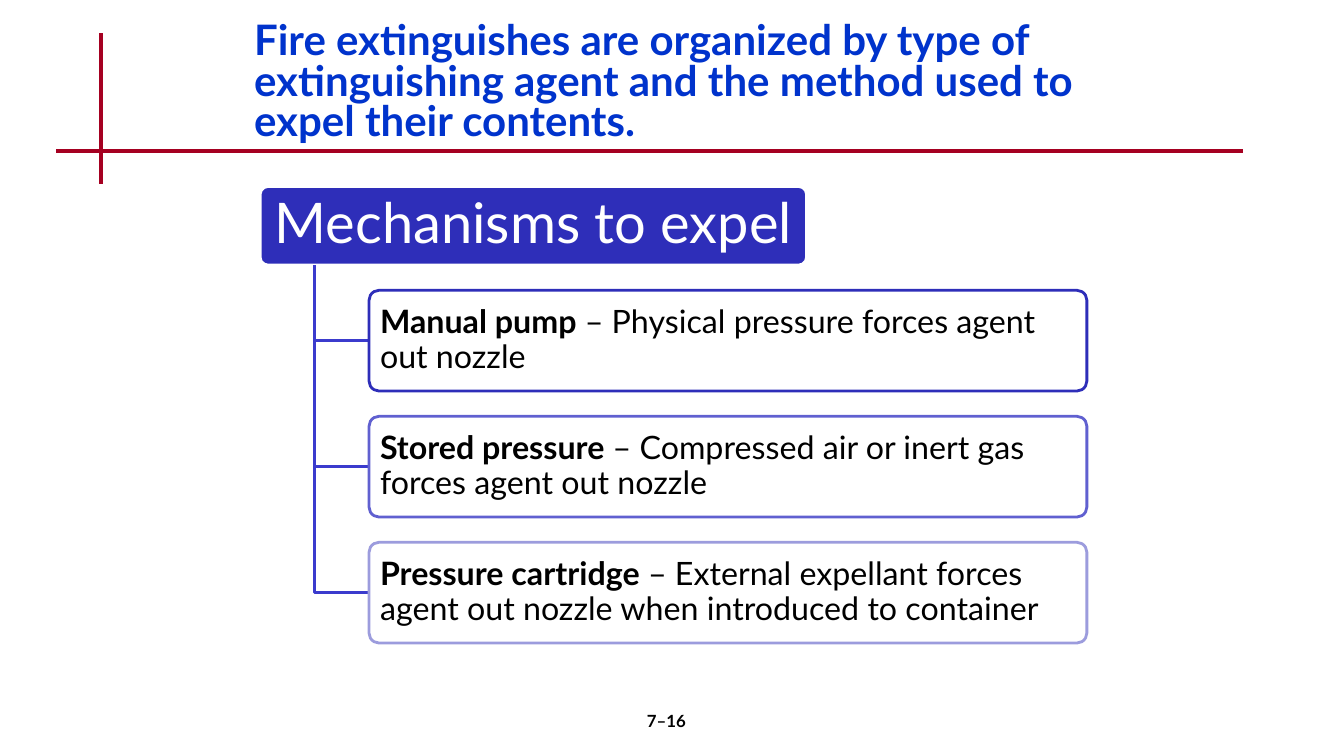
import pptx
import pptx.dml.color
import pptx.enum.shapes
import pptx.enum.text
import pptx.oxml.ns
import pptx.util
from lxml import etree

Inches = pptx.util.Inches
Pt = pptx.util.Pt
ALIGN = pptx.enum.text.PP_ALIGN
ANCHOR = pptx.enum.text.MSO_ANCHOR

COLORS = {
    "title": "0033CC",
    "rule": "A50021",
    "header": "2E2EB9",
    "branch": "3B3BCD",
    "white": "FFFFFF",
    "text": "000000",
}

TITLE = ("Fire extinguishes are organized by type of extinguishing agent "
         "and the method used to expel their contents.")

# Name, description, outline colour
MECHANISMS = [
    ("Manual pump ", "– Physical pressure forces agent out nozzle", "2E2EB9"),
    ("Stored pressure ", "– Compressed air or inert gas forces agent out nozzle", "6060D0"),
    ("Pressure cartridge ", "– External expellant forces agent out nozzle "
     "when introduced to container", "9C9CDD"),
]


def rgb(value):
    return pptx.dml.color.RGBColor.from_string(value)


class SlideBuilder:
    font = "Lato"
    line_width = Pt(2)

    def __init__(self, page):
        self.page = page

    def style_line(self, shape, color, width=line_width):
        shape.line.color.rgb = rgb(color)
        shape.line.width = width

    def add_text(self, shape, spans, size, color, align=ALIGN.LEFT,
                 anchor=ANCHOR.TOP, spacing=None, inset=(0.1, 0.05)):
        """Fill a shape with one paragraph of (text, bold) spans."""
        frame = shape.text_frame
        frame.word_wrap = True
        frame.auto_size = pptx.enum.text.MSO_AUTO_SIZE.NONE
        frame.vertical_anchor = anchor
        frame.margin_left = frame.margin_right = Inches(inset[0])
        frame.margin_top = frame.margin_bottom = Inches(inset[1])
        para = frame.paragraphs[0]
        para.alignment = align
        para.line_spacing = spacing
        for text, bold in spans:
            span = para.add_run()
            span.text = text
            span.font.name = self.font
            span.font.size = Pt(size)
            span.font.bold = bold
            span.font.color.rgb = rgb(color)

    def title(self, text, left, top, width, height):
        box = self.page.shapes.title
        box.left, box.top = Inches(left), Inches(top)
        box.width, box.height = Inches(width), Inches(height)
        self.add_text(box, [(text, True)], 30, COLORS["title"],
                      anchor=ANCHOR.MIDDLE, spacing=0.8)

    def rule(self, x1, y1, x2, y2):
        line = self.page.shapes.add_connector(
            pptx.enum.shapes.MSO_CONNECTOR.STRAIGHT,
            Inches(x1), Inches(y1), Inches(x2), Inches(y2))
        self.style_line(line, COLORS["rule"], Pt(3))
        etree.SubElement(line._element.spPr, pptx.oxml.ns.qn("a:effectLst"))

    def rounded_box(self, left, top, width, height, fill, outline, opacity=100):
        box = self.page.shapes.add_shape(
            pptx.enum.shapes.MSO_SHAPE.ROUNDED_RECTANGLE,
            Inches(left), Inches(top), Inches(width), Inches(height))
        box.shadow.inherit = False
        box.adjustments[0] = 0.1
        box.fill.solid()
        box.fill.fore_color.rgb = rgb(fill)
        if opacity < 100:
            color = box._element.spPr.find(".//" + pptx.oxml.ns.qn("a:srgbClr"))
            alpha = etree.SubElement(color, pptx.oxml.ns.qn("a:alpha"))
            alpha.set("val", str(opacity * 1000))
        self.style_line(box, outline)
        return box

    def branch(self, x, top, bottom, end_x):
        outline = self.page.shapes.build_freeform(Inches(x), Inches(top))
        outline.add_line_segments(
            [(Inches(x), Inches(bottom)), (Inches(end_x), Inches(bottom))],
            close=False)
        elbow = outline.convert_to_shape()
        elbow.shadow.inherit = False
        elbow.fill.background()
        self.style_line(elbow, COLORS["branch"])

    def label(self, text, left, top, width, height):
        box = self.page.shapes.add_textbox(
            Inches(left), Inches(top), Inches(width), Inches(height))
        self.add_text(box, [(text, True)], 12, COLORS["text"], ALIGN.CENTER)


def main():
    deck = pptx.Presentation()
    deck.slide_width, deck.slide_height = Inches(13.33), Inches(7.5)
    page = deck.slides.add_slide(deck.slide_layouts[5])
    builder = SlideBuilder(page)

    # Crossed rules and title
    builder.rule(1, 0.33, 1, 1.83)
    builder.rule(0.56, 1.5, 12.33, 1.5)
    builder.title(TITLE, 2.42, 0.17, 8.5, 1.33)

    # Header of the hierarchy
    left, top, width, height = 2.58, 1.85, 5.42, 0.78
    header = builder.rounded_box(left, top, width, height,
                                 COLORS["header"], COLORS["white"])
    builder.add_text(header, [("Mechanisms to expel", False)], 40, COLORS["white"],
                     ALIGN.CENTER, ANCHOR.MIDDLE, 0.9, (0.1, 0.08))

    # Mechanisms, each on a branch from the header
    indent, gap, box_height = 0.54, 0.25, 1
    trunk_x = left + indent
    box_left = trunk_x + indent
    header_bottom = top + height
    for index, (name, description, outline) in enumerate(MECHANISMS):
        box_top = header_bottom + gap + index * (box_height + gap)
        builder.branch(trunk_x, header_bottom, box_top + box_height / 2, box_left)
        box = builder.rounded_box(box_left, box_top, 7.12, box_height,
                                  COLORS["white"], outline, opacity=90)
        builder.add_text(box, [(name, True), (description, False)], 23, COLORS["text"],
                         anchor=ANCHOR.MIDDLE, spacing=0.9, inset=(0.08, 0.06))

    # Page number
    builder.label("7–16", 5.22, 7, 2.78, 0.5)

    deck.save("out.pptx")


if __name__ == "__main__":
    main()
